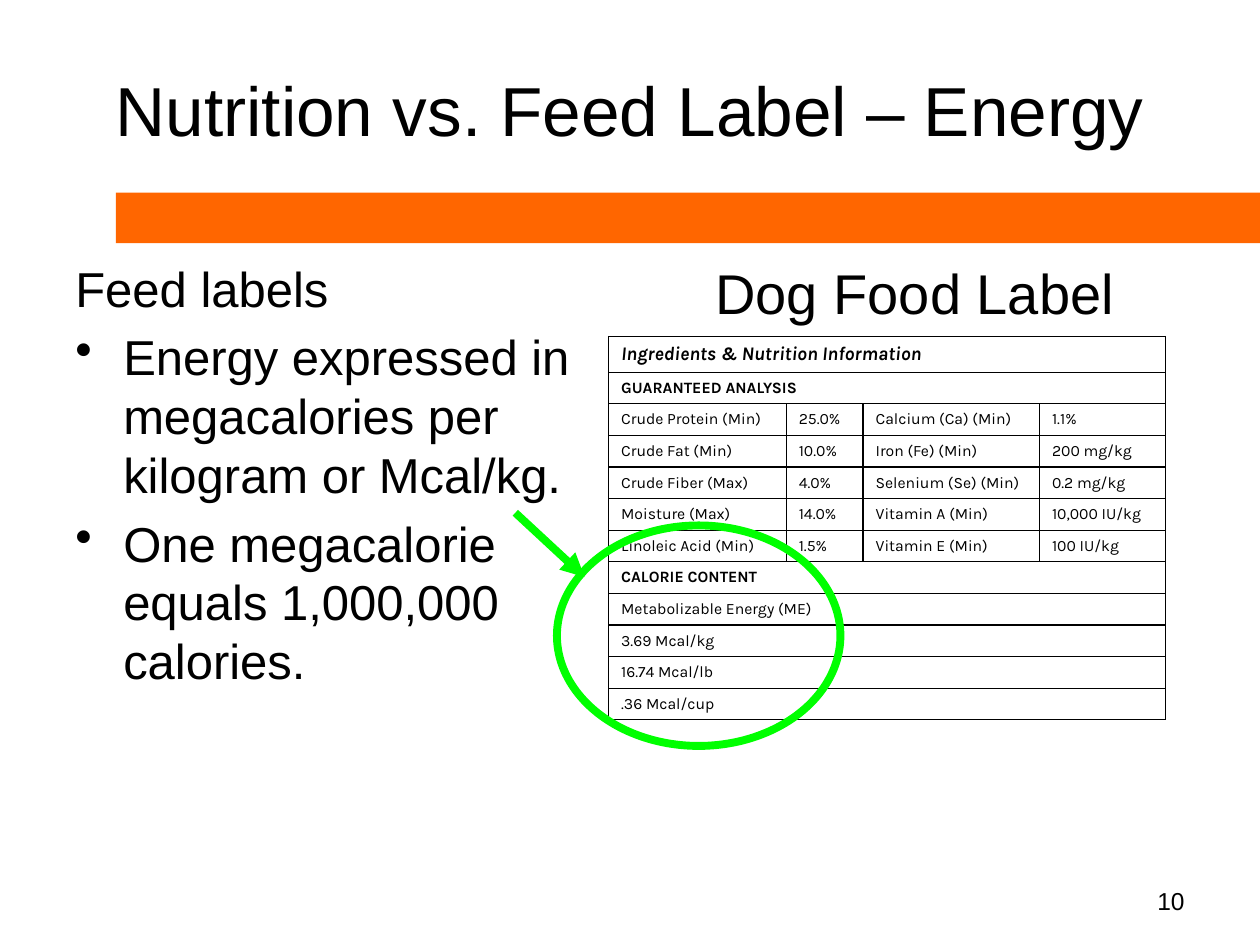
from dataclasses import dataclass

import pptx
import pptx.dml.color
import pptx.enum.shapes
import pptx.enum.text
import pptx.oxml
import pptx.oxml.ns
import pptx.util
from pptx.util import Inches

ANCHOR = pptx.enum.text.MSO_ANCHOR
ALIGN = pptx.enum.text.PP_ALIGN
SHAPE = pptx.enum.shapes.MSO_SHAPE


@dataclass(frozen=True)
class Theme:
    text: str = "000000"
    bar: str = "FF6600"
    mark: str = "00FF00"
    font: str = "Arial"
    table_font: str = "Karla"
    title: float = 39.6
    heading: float = 32
    body: float = 28
    number: float = 14
    table_head: float = 11
    table: float = 9
    mark_line: float = 4.5
    border: float = 0.75
    hang: float = 0.38


THEME = Theme()

BODY = [
    ("Feed labels", False),
    ("Energy expressed in megacalories per kilogram or Mcal/kg.", True),
    ("One megacalorie equals 1,000,000 calories.", True),
]
COLUMNS = [1.41, 0.61, 1.4, 1]
FIRST_ROW, OTHER_ROW = 0.28, 0.25
TITLE_ROW = "Ingredients & Nutrition Information"
SECTION_ROWS = ("GUARANTEED ANALYSIS", "CALORIE CONTENT")
ROWS = [
    [TITLE_ROW],
    [SECTION_ROWS[0]],
    ["Crude Protein (Min)", "25.0%", "Calcium (Ca) (Min)", "1.1%"],
    ["Crude Fat (Min)", "10.0%", "Iron (Fe) (Min)", "200 mg/kg"],
    ["Crude Fiber (Max)", "4.0%", "Selenium (Se) (Min)", "0.2 mg/kg"],
    ["Moisture (Max)", "14.0%", "Vitamin A (Min)", "10,000 IU/kg"],
    ["Linoleic Acid (Min)", "1.5%", "Vitamin E (Min)", "100 IU/kg"],
    [SECTION_ROWS[1]],
    ["Metabolizable Energy (ME)"],
    ["3.69 Mcal/kg"],
    ["16.74 Mcal/lb"],
    [".36 Mcal/cup"],
]


def rgb(color):
    return pptx.dml.color.RGBColor.from_string(color)


def set_attrs(obj, values):
    for name, value in values.items():
        setattr(obj, name, value)


def element(tag, inner="", attrs=""):
    ns = pptx.oxml.ns.nsdecls("a")
    return pptx.oxml.parse_xml(f"<a:{tag} {ns} {attrs}>{inner}</a:{tag}>")


def style_font(font, size, name=THEME.font, **extra):
    set_attrs(font, {"size": pptx.util.Pt(size), "name": name, **extra})
    font.color.rgb = rgb(THEME.text)


def hang_indent(p, bullet=False):
    pPr = p._p.get_or_add_pPr()
    pPr.set("marL", str(Inches(THEME.hang)))
    pPr.set("indent", str(-Inches(THEME.hang)))
    if bullet:
        pPr.append(element("buChar", attrs='char="•"'))


def add_title(s, text):
    sp = s.shapes.title
    set_attrs(sp, {"left": Inches(0.5), "top": Inches(0.3),
                   "width": Inches(9), "height": Inches(1.12)})
    tf = sp.text_frame
    tf.text = text
    set_attrs(tf, {"vertical_anchor": ANCHOR.MIDDLE, "word_wrap": True,
                   "auto_size": pptx.enum.text.MSO_AUTO_SIZE.NONE})
    p = tf.paragraphs[0]
    p.alignment = ALIGN.CENTER
    style_font(p.runs[0].font, THEME.title)


def add_text(s, box, text, size, align=ALIGN.LEFT, anchor=ANCHOR.TOP):
    tf = s.shapes.add_textbox(*map(Inches, box)).text_frame
    set_attrs(tf, {"word_wrap": True, "vertical_anchor": anchor, "text": text})
    p = tf.paragraphs[0]
    p.alignment = align
    style_font(p.runs[0].font, size)


def add_body(s, box, items):
    tf = s.shapes.add_textbox(*map(Inches, box)).text_frame
    tf.word_wrap = True
    for i, (text, bullet) in enumerate(items):
        p = tf.add_paragraph() if i else tf.paragraphs[0]
        hang_indent(p, bullet)
        if i:
            p.space_before = pptx.util.Pt(THEME.body * 0.2)
        r = p.add_run()
        r.text = text
        style_font(r.font, THEME.body)


def add_bar(s, box):
    sp = s.shapes.add_shape(SHAPE.RECTANGLE, *map(Inches, box))
    sp.shadow.inherit = False
    sp.fill.solid()
    sp.fill.fore_color.rgb = rgb(THEME.bar)
    sp.line.fill.background()


def style_mark(line):
    line.color.rgb = rgb(THEME.mark)
    line.width = pptx.util.Pt(THEME.mark_line)


def add_ring(s, box):
    sp = s.shapes.add_shape(SHAPE.OVAL, *map(Inches, box))
    sp.shadow.inherit = False
    sp.fill.background()
    style_mark(sp.line)


def add_arrow(s, start, end):
    kind = pptx.enum.shapes.MSO_CONNECTOR.STRAIGHT
    cx = s.shapes.add_connector(kind, *map(Inches, start + end))
    style_mark(cx.line)
    cx.line._get_or_add_ln().append(element("tailEnd", attrs='type="triangle"'))
    cx._element.spPr.append(element("effectLst"))


def format_cell(cell):
    """Draw all four borders and leave the cell without a fill."""
    tcPr = cell._tc.get_or_add_tcPr()
    inner = f'<a:solidFill><a:srgbClr val="{THEME.text}"/></a:solidFill>'
    for side in "LRTB":
        tcPr.append(element(f"ln{side}", inner,
                            f'w="{pptx.util.Pt(THEME.border)}"'))
    cell.fill.background()
    cell.vertical_anchor = ANCHOR.MIDDLE


def fill_cell(cell, text):
    p = cell.text_frame.paragraphs[0]
    hang_indent(p)
    r = p.add_run()
    r.text = text
    is_title = text == TITLE_ROW
    style_font(r.font, THEME.table_head if is_title else THEME.table,
               THEME.table_font, bold=is_title or text in SECTION_ROWS,
               italic=is_title)


def add_label_table(s, left, top):
    """A row with a single text spans every column."""
    heights = [FIRST_ROW] + [OTHER_ROW] * (len(ROWS) - 1)
    size = (sum(COLUMNS), sum(heights))
    table = s.shapes.add_table(len(ROWS), len(COLUMNS),
                               *map(Inches, (left, top) + size)).table
    set_attrs(table, {"first_row": False, "horz_banding": False})
    for column, width in zip(table.columns, COLUMNS):
        column.width = Inches(width)
    for i, (texts, height) in enumerate(zip(ROWS, heights)):
        table.rows[i].height = Inches(height)
        for cell in table.rows[i].cells:
            format_cell(cell)
        if len(texts) == 1:
            table.cell(i, 0).merge(table.cell(i, len(COLUMNS) - 1))
        for j, text in enumerate(texts):
            fill_cell(table.cell(i, j), text)


def main():
    prs = pptx.Presentation()
    set_attrs(prs, {"slide_width": Inches(10), "slide_height": Inches(7.5)})
    s = prs.slides.add_slide(prs.slide_layouts[5])
    add_bar(s, (0.92, 1.53, 9.08, 0.4))
    add_text(s, (7.17, 6.95, 2.33, 0.4), "10", THEME.number,
             ALIGN.RIGHT, ANCHOR.MIDDLE)
    add_title(s, "Nutrition vs. Feed Label – Energy")
    add_body(s, (0.5, 2, 4.42, 4.7), BODY)
    add_label_table(s, 4.83, 2.67)
    add_ring(s, (4.42, 4.17, 2.25, 1.75))
    add_arrow(s, (4.09, 4.07), (4.64, 4.58))
    add_text(s, (5.58, 2, 3.43, 0.63), "Dog Food Label", THEME.heading)
    prs.save("out.pptx")


if __name__ == "__main__":
    main()
